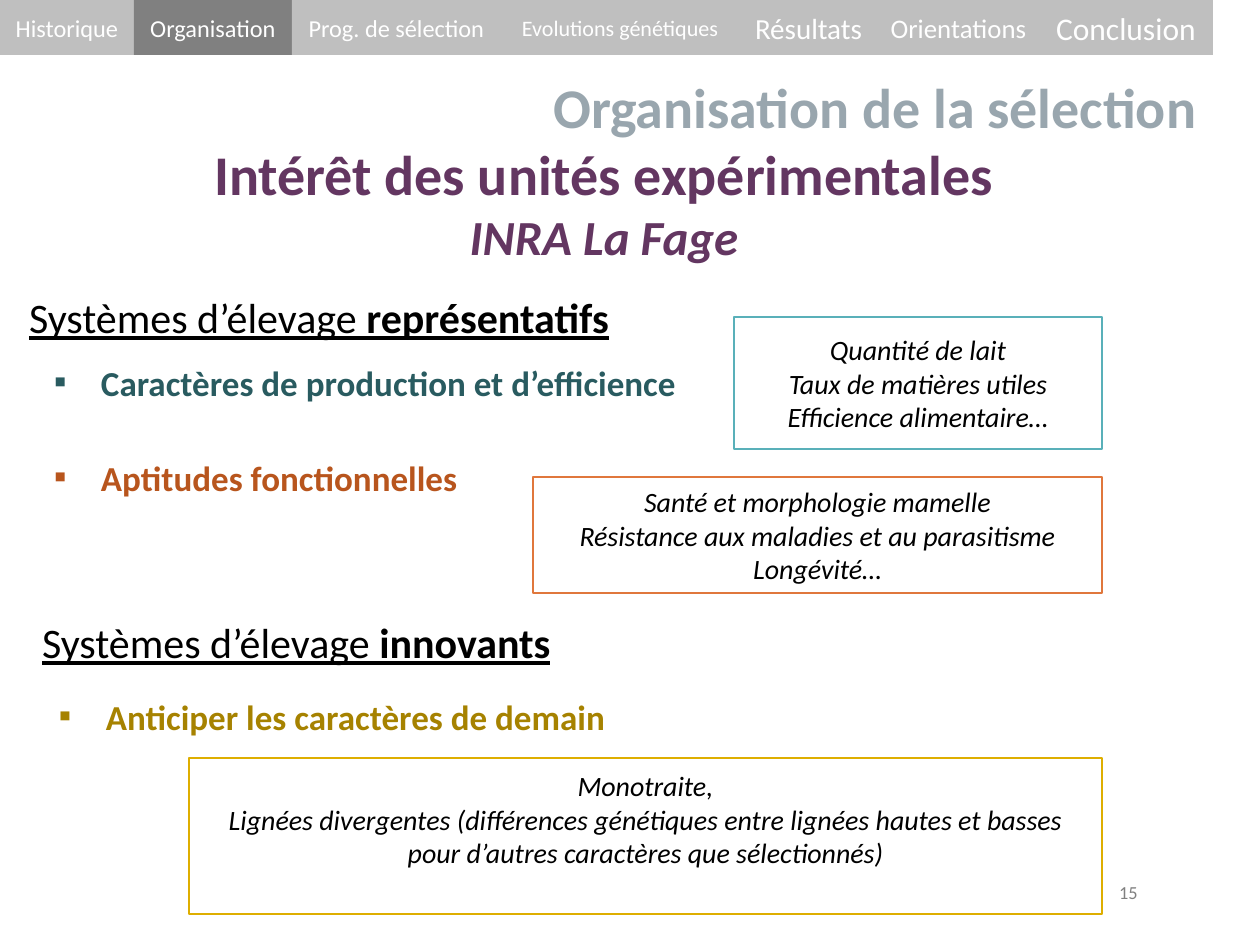
from pptx import Presentation
from pptx.dml.color import RGBColor
from pptx.enum.shapes import MSO_SHAPE
from pptx.enum.text import MSO_ANCHOR, PP_ALIGN
from pptx.util import Emu, Pt
from lxml import etree

RECT = MSO_SHAPE.RECTANGLE
TOP, MID = MSO_ANCHOR.TOP, MSO_ANCHOR.MIDDLE
LEFT, MID_X, RIGHT = PP_ALIGN.LEFT, PP_ALIGN.CENTER, PP_ALIGN.RIGHT
NS = "http://schemas.openxmlformats.org/drawingml/2006/main"
SCALE = 914400 / 126

THEME = {
    "font": "Calibri",
    "white": "FFFFFF", "black": "000000",
    "tab": "BFBFBF", "active": "808080",
    "title": "99A6AE", "plum": "633661",
    "teal": "295B60", "rust": "B8551D", "gold": "A68200",
    "teal_line": "59B0B9", "rust_line": "E0773C", "gold_line": "DEAE00",
    "big": 32, "sub": 28, "head": 24, "item": 20, "note": 16, "num": 10.5,
}


def px(n):
    return Emu(round(n * SCALE))


def write(shape, paras, anchor=TOP, pad=(13, 6, 13, 6), bullet=False):
    """Each paragraph is (alignment, runs); a run is (text, size, colour, styles)."""
    frame = shape.text_frame
    sides = ("margin_left", "margin_top", "margin_right", "margin_bottom")
    form = {"word_wrap": True, "vertical_anchor": anchor}
    form.update(zip(sides, map(px, pad)))
    for key, val in form.items():
        setattr(frame, key, val)
    for i, (align, runs) in enumerate(paras):
        para = frame.add_paragraph() if i else frame.paragraphs[0]
        para.alignment = align
        if bullet:
            props = para._p.get_or_add_pPr()
            props.set("marL", str(px(47)))
            props.set("indent", str(-px(47)))
            etree.SubElement(props, f"{{{NS}}}buFont", typeface=THEME["font"])
            etree.SubElement(props, f"{{{NS}}}buChar", char="▪")
        for text, size, color, styles in runs:
            run = para.add_run()
            run.text = text
            look = {"name": THEME["font"], "size": Pt(size)}
            look.update(dict.fromkeys(styles, True))
            for key, val in look.items():
                setattr(run.font, key, val)
            run.font.color.rgb = RGBColor.from_string(THEME[color])


deck = Presentation()
deck.slide_width, deck.slide_height = px(1260), px(945)
slide = deck.slides.add_slide(deck.slide_layouts[6])
shapes = slide.shapes

# Section headings
HEADS = [
    ((16, 286, 612, 63), "représentatifs"),
    ((29, 611, 610, 63), "innovants"),
]
for box, word in HEADS:
    runs = [("Systèmes d’élevage ", THEME["head"], "black", ["underline"]),
            (word, THEME["head"], "black", ["underline", "bold"])]
    write(shapes.add_textbox(*map(px, box)), [(LEFT, runs)])

# Bullet items
ITEMS = [
    ((41, 355, 663, 55), "Caractères de production et d’efficience", "teal"),
    ((41, 450, 432, 55), "Aptitudes fonctionnelles", "rust"),
    ((46, 689, 577, 55), "Anticiper les caractères de demain", "gold"),
]
for box, text, color in ITEMS:
    runs = [(text, THEME["item"], color, ["bold"])]
    write(shapes.add_textbox(*map(px, box)), [(LEFT, runs)], bullet=True)

# Navigation tabs
TABS = [
    ("Historique", 134, 13.9), ("Organisation", 158, 13.9),
    ("Prog. de sélection", 209, 13.9), ("Evolutions génétiques", 238, 12.6),
    ("Résultats", 139, 16.6), ("Orientations", 161, 15.3),
    ("Conclusion", 174, 18),
]
left = 0
for name, width, size in TABS:
    tab = shapes.add_shape(RECT, px(left), px(0), px(width), px(55))
    tab.shadow.inherit = False
    tab.fill.solid()
    fill = "active" if name == "Organisation" else "tab"
    tab.fill.fore_color.rgb = RGBColor.from_string(THEME[fill])
    tab.line.fill.background()
    write(tab, [(MID_X, [(name, size, "white", [])])], MID, (0, 6, 0, 6))
    left += width

# Title block
title = shapes.add_textbox(px(-2), px(55), px(1212), px(228))
write(title, [
    (RIGHT, [("Organisation de la sélection", THEME["big"], "title", ["bold"])]),
    (MID_X, [("Intérêt des unités expérimentales", THEME["big"], "plum", ["bold"])]),
    (MID_X, [("INRA La Fage", THEME["sub"], "plum", ["bold", "italic"])]),
], MID)

# Slide number
num = shapes.add_textbox(px(1092), px(882), px(73), px(21))
write(num, [(MID_X, [("15", THEME["num"], "active", [])])], MID, (0, 0, 0, 0))

# Framed examples, the last one with its text raised by one line
NOTES = [
    ((734, 317, 368, 132), "teal_line", 6,
     ["Quantité de lait", "Taux de matières utiles", "Efficience alimentaire…"]),
    ((533, 477, 569, 116), "rust_line", 6,
     ["Santé et morphologie mamelle",
      "Résistance aux maladies et au parasitisme", "Longévité…"]),
    ((189, 758, 913, 156), "gold_line", 40,
     ["Monotraite,",
      "Lignées divergentes (différences génétiques entre lignées hautes et basses",
      "pour d’autres caractères que sélectionnés)"]),
]
for box, edge, low, lines in NOTES:
    note = shapes.add_shape(RECT, *map(px, box))
    note.shadow.inherit = False
    note.fill.solid()
    note.fill.fore_color.rgb = RGBColor.from_string(THEME["white"])
    note.line.color.rgb = RGBColor.from_string(THEME[edge])
    note.line.width = Pt(1.25)
    paras = [(MID_X, [(line, THEME["note"], "black", ["italic"])]) for line in lines]
    write(note, paras, MID, (13, 6, 13, low))

deck.save("out.pptx")
